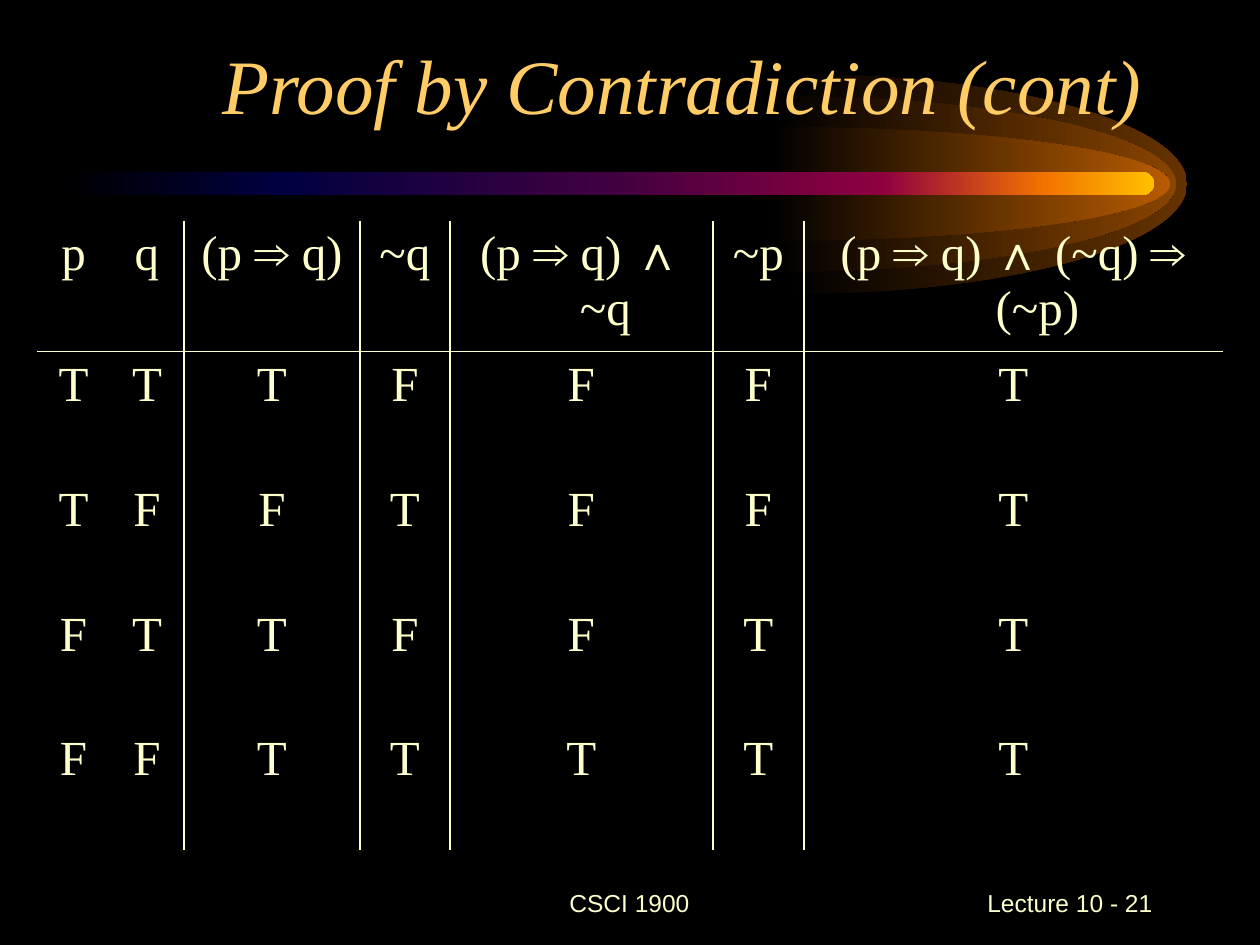
"""Build the truth table slide for proof by contradiction."""
from dataclasses import dataclass

import lxml.etree
import pptx
import pptx.dml.color
import pptx.enum.shapes
import pptx.enum.text
import pptx.oxml.ns
import pptx.util

EMU_PER_PX = 914400 / 126
ALIGN = pptx.enum.text.PP_ALIGN
ANCHOR = pptx.enum.text.MSO_ANCHOR
qn = pptx.oxml.ns.qn


@dataclass(frozen=True)
class Theme:
    background: str = "000000"
    body: str = "FFFFCC"
    heading: str = "FFCC66"
    serif: str = "Times New Roman"
    sans: str = "Arial"
    heading_pt: int = 44
    table_pt: int = 28
    footer_pt: int = 14
    rule_pt: int = 1
    glow: tuple[str, ...] = ("663300", "894400", "B75B00")
    comet: tuple[tuple[int, str], ...] = (
        (0, "000000"), (20, "000040"), (50, "400040"),
        (75, "8F0040"), (90, "F27300"), (100, "FFBF00"))


@dataclass(frozen=True)
class Halo:
    center: int
    height: int
    color: str


@dataclass(frozen=True)
class Caption:
    text: str
    box: tuple[int, int, int, int]
    align: ALIGN
    anchor: ANCHOR
    size: int
    font: str
    color: str
    italic: bool = False


THEME = Theme()
COMET_Y = 184
HALO_REACH = 394
HALO_TAIL = 6
ELLIPSE_PULL = 0.55
HALOS = [Halo(center, height, color) for center, height, color
         in zip((793, 782, 776), (110, 88, 57), THEME.glow)]
CAPTIONS = [
    Caption("CSCI 1900", (430, 871, 399, 63), ALIGN.CENTER, ANCHOR.MIDDLE,
            THEME.footer_pt, THEME.sans, THEME.body),
    Caption("Lecture 10 - 21", (903, 871, 262, 63), ALIGN.RIGHT, ANCHOR.MIDDLE,
            THEME.footer_pt, THEME.sans, THEME.body),
    Caption("Proof by Contradiction (cont)", (84, 32, 1071, 104), ALIGN.RIGHT,
            ANCHOR.BOTTOM, THEME.heading_pt, THEME.serif, THEME.heading, True),
]
TRUTH_ROWS = [
    ("p", "q", "(p ⇒ q)", "~q", "(p ⇒ q) ∧ ~q", "~p", "(p ⇒ q) ∧ (~q) ⇒ (~p)"),
    *("TTTFFFT", "TFFTFFT", "FTTFFTT", "FFTTTTT"),
]
COLUMN_WIDTHS = (73, 74, 176, 90, 263, 91, 419)
ROW_HEIGHTS = (129, 125, 125, 124, 125)
HANGING_INDENT = 48


def px(length: float) -> pptx.util.Emu:
    """Turn pixels into EMU."""
    return pptx.util.Emu(round(length * EMU_PER_PX))


def rgb(color: str) -> pptx.dml.color.RGBColor:
    """Turn a hex string into a colour."""
    return pptx.dml.color.RGBColor.from_string(color)


def add_run(paragraph, text: str, size: int, font: str, color: str,
            italic: bool = False) -> None:
    """Add one styled run."""
    run = paragraph.add_run()
    run.text = text
    run.font.size = pptx.util.Pt(size)
    run.font.name = font
    run.font.bold = False
    run.font.italic = italic
    run.font.color.rgb = rgb(color)


def paint_gradient(shape, stops: tuple[tuple[int, str], ...]) -> None:
    """Fill a shape from left to right, without outline or shadow."""
    shape.shadow.inherit = False
    shape.line.fill.background()
    shape.fill.gradient()
    shape.fill.gradient_angle = 0
    stop_list = shape._element.spPr.find(".//" + qn("a:gsLst"))
    stop_list.clear()
    for position, color in stops:
        stop = lxml.etree.SubElement(stop_list, qn("a:gs"), pos=str(position * 1000))
        lxml.etree.SubElement(stop, qn("a:srgbClr"), val=color)


def bend_segment(segment, points: tuple[tuple[float, float], ...]) -> None:
    """Turn a straight outline segment into a cubic curve."""
    curve = lxml.etree.Element(qn("a:cubicBezTo"))
    for x, y in points:
        lxml.etree.SubElement(curve, qn("a:pt"), x=str(px(x)), y=str(px(y)))
    segment.getparent().replace(segment, curve)


def draw_halo(slide, halo: Halo) -> None:
    """Draw the right half of an ellipse around the comet."""
    x, height = halo.center, halo.height
    builder = slide.shapes.build_freeform(px(x), px(COMET_Y - height))
    builder.add_line_segments(
        [(px(x + HALO_REACH), px(COMET_Y)),
         (px(x - HALO_TAIL), px(COMET_Y + height)),
         (px(x), px(COMET_Y))], close=True)
    shape = builder.convert_to_shape()
    upper, lower = shape._element.spPr.findall(".//" + qn("a:lnTo"))[:2]
    tip = HALO_TAIL + HALO_REACH
    pull_x = HALO_TAIL + HALO_REACH * ELLIPSE_PULL
    pull_y = height * ELLIPSE_PULL
    bend_segment(upper, ((pull_x, 0), (tip, height - pull_y), (tip, height)))
    bend_segment(lower, ((tip, height + pull_y), (pull_x, 2 * height),
                         (0, 2 * height)))
    paint_gradient(shape, ((0, THEME.background), (100, halo.color)))


def draw_comet(slide) -> None:
    """Draw the glowing bar under the heading."""
    comet = slide.shapes.add_shape(
        pptx.enum.shapes.MSO_SHAPE.ROUNDED_RECTANGLE,
        px(63), px(172), px(1091), px(23))
    comet.adjustments[0] = 0.5
    paint_gradient(comet, THEME.comet)


def draw_caption(slide, caption: Caption) -> None:
    """Draw one line of text outside the table."""
    frame = slide.shapes.add_textbox(*map(px, caption.box)).text_frame
    frame.word_wrap = True
    frame.vertical_anchor = caption.anchor
    frame.paragraphs[0].alignment = caption.align
    add_run(frame.paragraphs[0], caption.text, caption.size, caption.font,
            caption.color, caption.italic)


def rule_cell(cell, ruled_sides: set[str]) -> None:
    """Rule the given sides of a cell and clear the others."""
    properties = cell._tc.get_or_add_tcPr()
    for index, side in enumerate("LRTB"):
        border = lxml.etree.Element(
            qn(f"a:ln{side}"), w=str(pptx.util.Pt(THEME.rule_pt)))
        if side in ruled_sides:
            fill = lxml.etree.SubElement(border, qn("a:solidFill"))
            lxml.etree.SubElement(fill, qn("a:srgbClr"), val=THEME.body)
        else:
            lxml.etree.SubElement(border, qn("a:noFill"))
        properties.insert(index, border)


def draw_truth_table(slide) -> None:
    """Draw the truth table with rules between the statements."""
    table = slide.shapes.add_table(
        len(ROW_HEIGHTS), len(COLUMN_WIDTHS), px(37), px(221),
        px(sum(COLUMN_WIDTHS)), px(sum(ROW_HEIGHTS))).table
    table.first_row = table.horz_banding = False
    for column, width in zip(table.columns, COLUMN_WIDTHS):
        column.width = px(width)
    for row, height in zip(table.rows, ROW_HEIGHTS):
        row.height = px(height)
    last_column = len(COLUMN_WIDTHS) - 1
    for row_index, statements in enumerate(TRUTH_ROWS):
        for column_index, statement in enumerate(statements):
            cell = table.cell(row_index, column_index)
            cell.fill.background()
            paragraph = cell.text_frame.paragraphs[0]
            paragraph.alignment = ALIGN.CENTER
            indents = paragraph._p.get_or_add_pPr()
            indents.set("marL", str(px(HANGING_INDENT)))
            indents.set("indent", str(px(-HANGING_INDENT)))
            add_run(paragraph, statement, THEME.table_pt, THEME.serif, THEME.body)
            ruled = {"L": column_index > 1, "R": 0 < column_index < last_column,
                     "T": row_index == 1, "B": row_index == 0}
            rule_cell(cell, {side for side, shown in ruled.items() if shown})


def main() -> None:
    """Build and save the slide."""
    deck = pptx.Presentation()
    deck.slide_width, deck.slide_height = px(1260), px(945)
    slide = deck.slides.add_slide(deck.slide_layouts[6])
    slide.background.fill.solid()
    slide.background.fill.fore_color.rgb = rgb(THEME.background)
    for halo in HALOS:
        draw_halo(slide, halo)
    draw_comet(slide)
    for caption in CAPTIONS:
        draw_caption(slide, caption)
    draw_truth_table(slide)
    deck.save("out.pptx")


if __name__ == "__main__":
    main()
